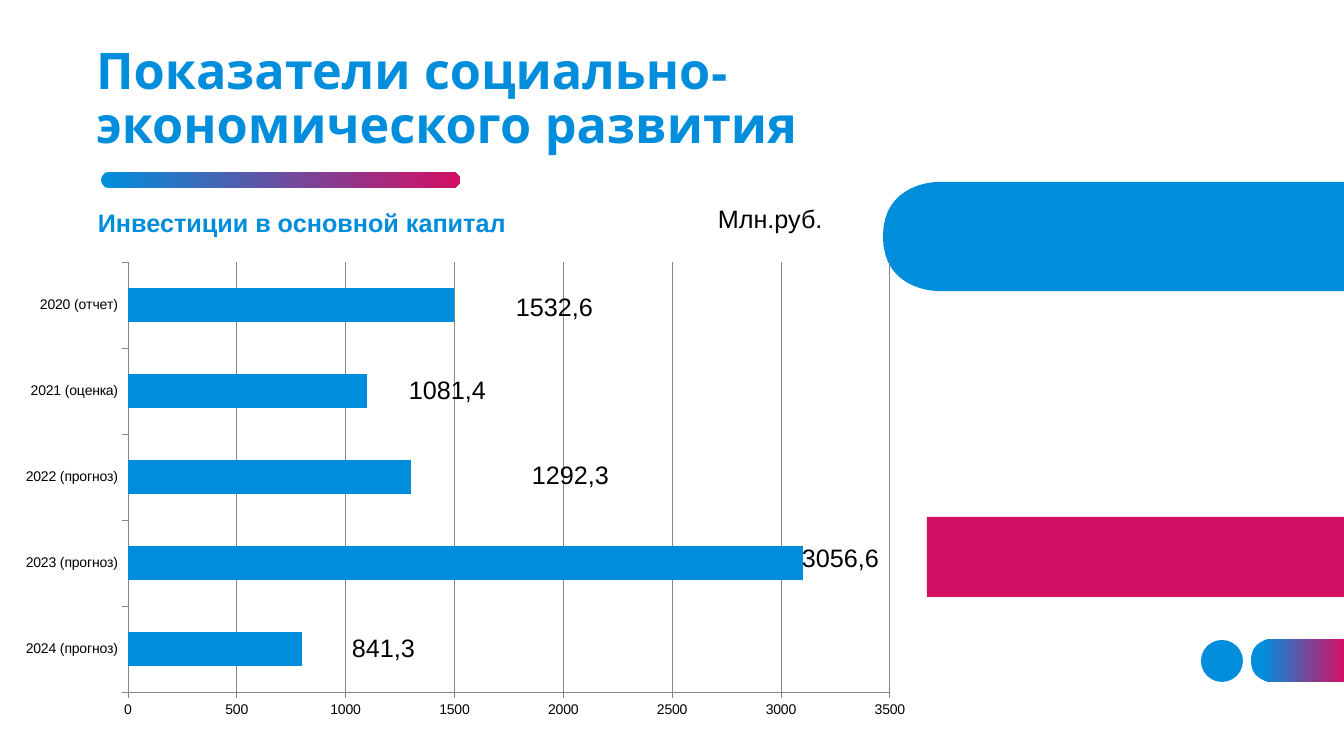
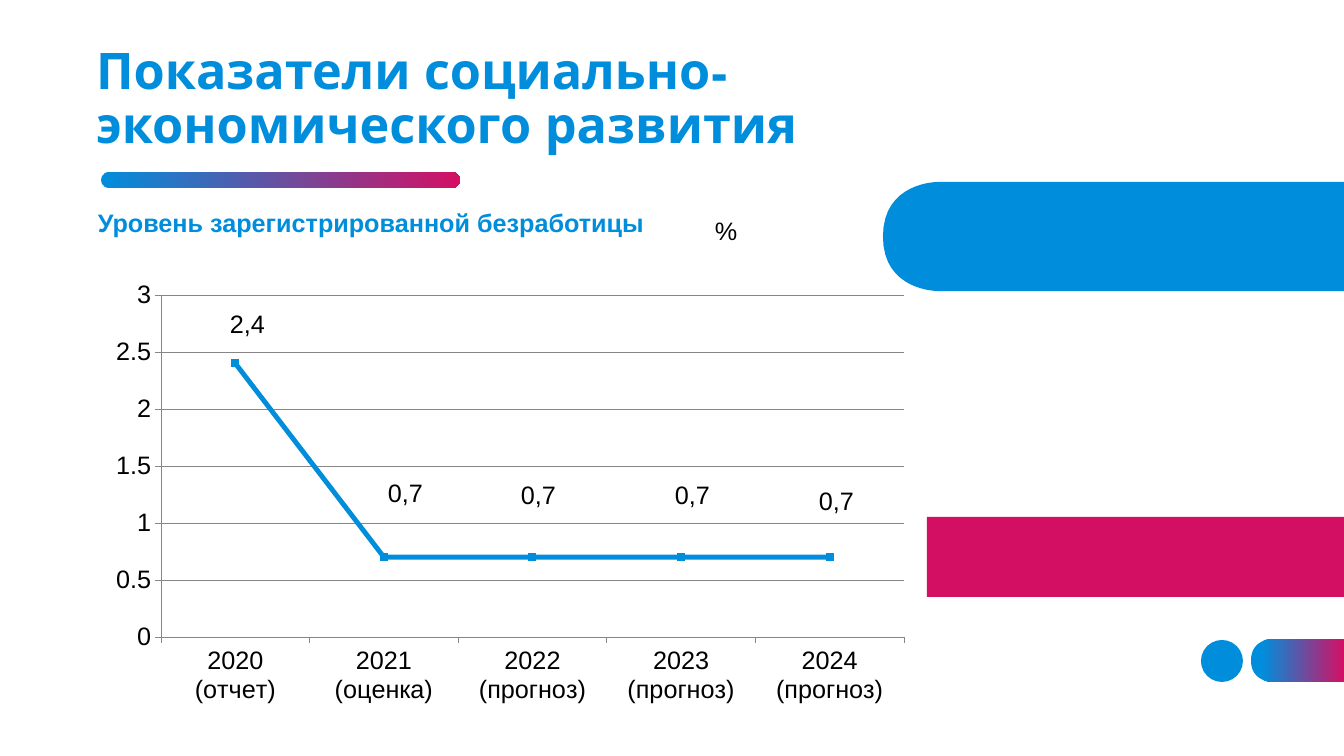
from lxml import etree
from pptx import Presentation
from pptx.chart.data import CategoryChartData
from pptx.dml.color import RGBColor
from pptx.enum.chart import XL_CHART_TYPE as CT, XL_MARKER_STYLE as MARKER, XL_TICK_MARK as TICK
from pptx.enum.shapes import MSO_SHAPE as SHAPE
from pptx.enum.text import MSO_ANCHOR as ANCHOR, MSO_AUTO_SIZE as AUTO, PP_ALIGN as ALIGN
from pptx.oxml.ns import qn
from pptx.util import Pt

SCALE = 12192000 / 1344
BLUE, PINK, BLACK, GRAY = "008EDC", "D30F64", "000000", "868686"
HEAD_FONT, BODY_FONT = "League Spartan", "Arial"
TITLE = "Показатели социально-экономического развития"


def px(*lengths):
    return [round(n * SCALE) for n in lengths]


def rgb(color):
    return RGBColor.from_string(color)


def paint(sp, color, end=None, start_at=0):
    """Fill without outline or shadow; with an end colour, blend left to right."""
    sp.shadow.inherit = False
    sp.line.fill.background()
    if end is None:
        fill_solid(sp, color)
        return
    sp.fill.gradient()
    sp.fill.gradient_angle = 0
    for stop, hue, pos in zip(sp.fill.gradient_stops, (color, end), (start_at, 1)):
        stop.color.rgb = rgb(hue)
        stop.position = pos


def fill_solid(target, color):
    target.fill.solid()
    target.fill.fore_color.rgb = rgb(color)


def set_font(font, size, color, name=BODY_FONT, bold=False):
    font.name, font.size, font.bold = name, Pt(size), bold
    font.color.rgb = rgb(color)


def add_shape(slide, kind, box):
    return slide.shapes.add_shape(kind, *px(*box))


def add_band(slide, box):
    """Band with a square right end and a left end rounded by two Bézier arcs."""
    x, y, w, h = box
    r, steps = h / 2, 16
    arc = []
    for i in range(steps + 1):
        t = i / steps
        arc.append((x + r * (1 - t) ** 2 * (1 + 2 * t), y + r * t ** 3))
    mirrored = [(ax, 2 * y + h - ay) for ax, ay in reversed(arc)]
    points = [px(*pt) for pt in arc + mirrored + [(x + w, y + h)]]
    builder = slide.shapes.build_freeform(*px(x + w, y))
    builder.add_line_segments(points, close=True)
    return builder.convert_to_shape()


def add_decor(slide):
    paint(add_shape(slide, SHAPE.OVAL, (1201, 640, 42, 42)), BLUE)
    paint(add_band(slide, (1251, 639, 93, 43)), BLUE, PINK, 0.12)
    paint(add_band(slide, (883, 182, 461, 109)), BLUE)
    paint(add_shape(slide, SHAPE.RECTANGLE, (927, 517, 417, 80)), PINK)
    underline = add_shape(slide, SHAPE.ROUNDED_RECTANGLE, (101, 172, 359, 16))
    underline.adjustments[0] = 0.5
    paint(underline, BLUE, PINK)


def add_text(slide, text, box, color=BLACK, bold=False, wrap=True):
    tf = slide.shapes.add_textbox(*px(*box)).text_frame
    tf.word_wrap = wrap
    p = tf.paragraphs[0]
    p.text = text
    set_font(p.font, 18, color, bold=bold)
    return p


def set_title(slide):
    title = slide.shapes.title
    title.left, title.top, title.width, title.height = px(86, 88, 1008, 72)
    tf = title.text_frame
    tf.text = TITLE
    tf.word_wrap, tf.auto_size, tf.vertical_anchor = True, AUTO.NONE, ANCHOR.BOTTOM
    p = tf.paragraphs[0]
    p.alignment, p.line_spacing = ALIGN.LEFT, 0.9
    set_font(p.font, 36, BLUE, HEAD_FONT, True)


def place_plot(chart, box, plot):
    """Fix the inner plot area, given in slide px, within the chart box."""
    area = chart._chartSpace.find(".//" + qn("c:plotArea"))
    for old in area.findall(qn("c:layout")):
        area.remove(old)
    layout = etree.Element(qn("c:layout"))
    area.insert(0, layout)
    manual = etree.SubElement(layout, qn("c:manualLayout"))
    x, y, w, h = box
    shares = ((plot[0] - x) / w, (plot[1] - y) / h, plot[2] / w, plot[3] / h)
    settings = [("layoutTarget", "inner"), ("xMode", "edge"), ("yMode", "edge")]
    settings += zip("xywh", (f"{share:.4f}" for share in shares))
    for tag, val in settings:
        etree.SubElement(manual, qn(f"c:{tag}")).set("val", val)


def add_chart(slide, kind, points, box, plot, size, top, step):
    data = CategoryChartData()
    data.categories = [name for name, _ in points]
    data.add_series("Series 1", [value for _, value in points])
    chart = slide.shapes.add_chart(kind, *px(*box), data).chart
    chart.has_legend = chart.has_title = False
    set_font(chart.font, size, BLACK)
    place_plot(chart, box, plot)
    value_axis = chart.value_axis
    value_axis.minimum_scale, value_axis.maximum_scale = 0, top
    value_axis.major_unit = step
    value_axis.has_major_gridlines = True
    chart.category_axis.has_major_gridlines = False
    for axis in (value_axis, chart.category_axis):
        axis.major_tick_mark, axis.minor_tick_mark = TICK.OUTSIDE, TICK.NONE
    for lines in (value_axis, chart.category_axis, value_axis.major_gridlines):
        lines.format.line.color.rgb = rgb(GRAY)
        lines.format.line.width = Pt(0.5)
    chart.plots[0].vary_by_categories = False
    return chart.plots[0]


def add_indicator_slide(prs, subtitle, unit, unit_box):
    slide = prs.slides.add_slide(prs.slide_layouts[5])
    add_decor(slide)
    set_title(slide)
    add_text(slide, subtitle, (88, 206, 754, 54), BLUE, True).line_spacing = 0.9
    add_text(slide, unit, unit_box)
    return slide


def add_labels(slide, labels, width):
    for text, x, y in labels:
        add_text(slide, text, (x, y, width, 40), wrap=False)


def investment_slide(prs):
    slide = add_indicator_slide(prs, "Инвестиции в основной капитал",
                                "Млн.руб.", (708, 198, 148, 40))
    points = [("2024 (прогноз)", 800), ("2023 (прогноз)", 3100),
              ("2022 (прогноз)", 1300), ("2021 (оценка)", 1100),
              ("2020 (отчет)", 1500)]
    plot = add_chart(slide, CT.BAR_CLUSTERED, points, (19, 240, 908, 479),
                     (128, 262, 762, 430), 10, 3500, 500)
    plot.gap_width = 150
    fill_solid(plot.series[0].format, BLUE)
    add_labels(slide, [("3056,6", 792, 537), ("1292,3", 522, 454),
                       ("1532,6", 506, 286), ("1081,4", 399, 369)], 105)
    add_labels(slide, [("841,3", 342, 627)], 91)


def unemployment_slide(prs):
    slide = add_indicator_slide(prs, "Уровень зарегистрированной безработицы",
                                "%", (705, 210, 148, 40))
    points = [("2020 (отчет)", 2.4), ("2021 (оценка)", 0.7), ("2022 (прогноз)", 0.7),
              ("2023 (прогноз)", 0.7), ("2024 (прогноз)", 0.7)]
    plot = add_chart(slide, CT.LINE_MARKERS, points, (100, 272, 822, 439),
                     (161, 295, 743, 342), 18, 3, 0.5)
    series = plot.series[0]
    series.smooth = False
    series.format.line.color.rgb = rgb(BLUE)
    series.format.line.width = Pt(3.5)
    series.marker.style, series.marker.size = MARKER.SQUARE, 5
    fill_solid(series.marker.format, BLUE)
    series.marker.format.line.color.rgb = rgb(BLUE)
    add_labels(slide, [("2,4", 220, 303), ("0,7", 378, 472), ("0,7", 511, 474),
                       ("0,7", 665, 474), ("0,7", 809, 480)], 55)


def main():
    prs = Presentation()
    prs.slide_width, prs.slide_height = px(1344, 756)
    investment_slide(prs)
    unemployment_slide(prs)
    prs.save("out.pptx")


if __name__ == "__main__":
    main()
